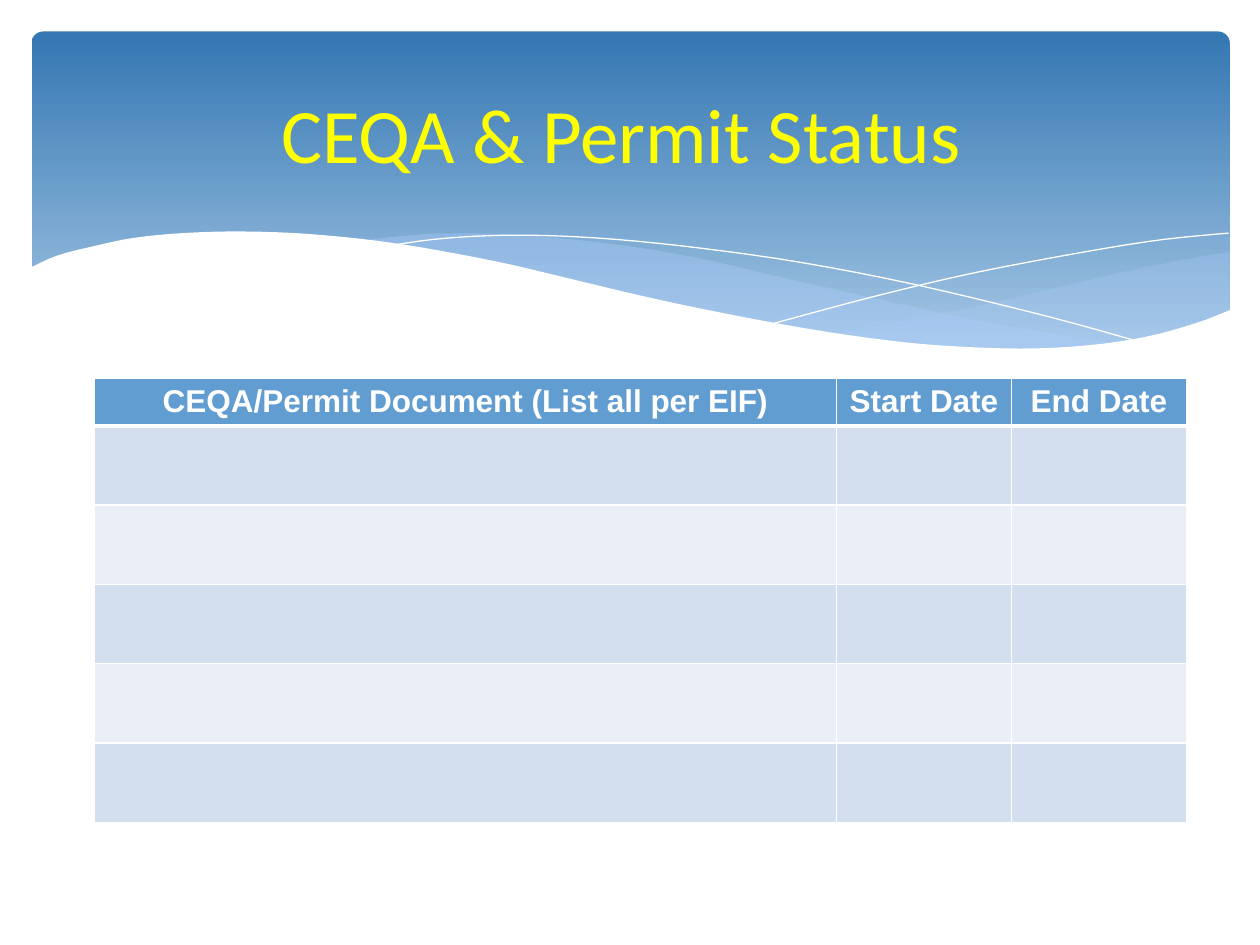
from lxml import etree
from pptx import Presentation
from pptx import util as u
from pptx.dml.color import RGBColor
from pptx.enum import shapes, text
from pptx.oxml.ns import qn

Pt = u.Pt
WHITE = RGBColor(0xFF, 0xFF, 0xFF)
YELLOW = RGBColor(0xFF, 0xFF, 0x00)
DEEP = RGBColor(0x34, 0x77, 0xB2)
PALE = RGBColor(0xA1, 0xC4, 0xE3)
VEIL = RGBColor(0xAC, 0xCB, 0xF9)
HEAD = RGBColor(0x62, 0x9D, 0xD1)
ODD = RGBColor(0xD3, 0xDF, 0xEE)
EVEN = RGBColor(0xEA, 0xEF, 0xF7)

# Curves of the banner, in points
SWELL = [(16.5, 153.4), (33, 146), (55, 140.4), (76.3, 136), (105, 133.2),
         (139, 132.3), (180, 134), (227.5, 139.3), (281.5, 149),
         (322, 158.4), (362, 168), (399.6, 176.2), (450.7, 186),
         (495.4, 193), (535.7, 197.3), (582.5, 199.2), (621.4, 197.4),
         (655.2, 192.4), (684, 184.5), (703.4, 177)]
BASE = [(703.4, 236.9), (16.5, 236.9)]
RIGHT_TOP = [(702.7, 144), (673.2, 149), (641.5, 155.5), (599, 165.6),
             (542.2, 178.3), (476, 191)]
RIGHT_LOW = [(476, 191), (507.6, 195), (545, 198.7), (586, 200),
             (615, 198.7), (645.8, 194.6), (673.2, 188.4), (702.7, 177.8)]
MID_TOP = [(643, 196.6), (581, 187.2), (533.5, 177.8), (453, 160),
           (399.6, 147.6), (352, 139.7), (302.4, 134.6), (260, 133.3),
           (236, 134.3), (206, 137.5)]
MID_LOW = [(206, 137.5), (246.2, 143.3), (291, 152), (323.3, 159.8),
           (381.6, 172.8), (432.7, 183.6), (478.8, 191.5), (519.8, 197.3),
           (565.2, 200), (603.4, 200), (643, 196.6)]
FALL = [(222.5, 140.4), (247.7, 136.8), (278.6, 134.7), (311.8, 134.6),
        (352, 136.8), (400.3, 141.8), (458, 150), (523.4, 162.7),
        (598.3, 180.7), (653, 195.8)]
RISE = [(441.4, 185), (500.4, 169.2), (558.7, 155.5), (623.5, 143.3),
        (665.3, 136.8), (702, 133.2)]


def smooth(knots, steps=4):
    """Run a Catmull-Rom curve through the knots."""
    ends = [knots[0], *knots, knots[-1]]
    dots = [knots[0]]
    for a, b, c, d in zip(ends, ends[1:], ends[2:], ends[3:]):
        for i in range(1, steps + 1):
            t = i / steps
            dots.append(tuple(
                q + t * (r - p) / 2
                + t ** 2 * (2 * p - 5 * q + 4 * r - s) / 2
                + t ** 3 * (3 * q - p - 3 * r + s) / 2
                for p, q, r, s in zip(a, b, c, d)))
    return dots


def apply(item, style):
    for name, value in style.items():
        setattr(item, name, value)


class Deck:
    title_font = {"name": "Calibri", "size": Pt(44)}
    head_font = {"name": "Arial", "size": Pt(18), "bold": True}

    def __init__(self, wide, high):
        self.prs = Presentation()
        apply(self.prs, {"slide_width": Pt(wide), "slide_height": Pt(high)})
        self.slide = self.prs.slides.add_slide(self.prs.slide_layouts[5])
        self.shapes = self.slide.shapes

    def label(self, frame, words, font, color):
        frame.text = words
        par = frame.paragraphs[0]
        par.alignment = text.PP_ALIGN.CENTER
        apply(par.runs[0].font, font)
        par.runs[0].font.color.rgb = color

    def panel(self, box, curve, stops):
        kind = shapes.MSO_SHAPE.ROUNDED_RECTANGLE
        shape = self.shapes.add_shape(kind, *map(Pt, box))
        shape.adjustments[0] = curve
        shape.shadow.inherit = False
        shape.line.fill.background()
        shape.fill.gradient()
        shape.fill.gradient_angle = 270
        for stop, (place, color) in zip(shape.fill.gradient_stops, stops):
            stop.position = place
            stop.color.rgb = color

    def outline(self, dots, close):
        dots = [(Pt(x), Pt(y)) for x, y in dots]
        pen = self.shapes.build_freeform(*dots[0])
        pen.add_line_segments(dots[1:], close=close)
        shape = pen.convert_to_shape()
        shape.shadow.inherit = False
        return shape

    def area(self, dots, color, alpha=100):
        shape = self.outline(dots, True)
        shape.line.fill.background()
        shape.fill.solid()
        shape.fill.fore_color.rgb = color
        if alpha < 100:
            tint = next(shape._element.spPr.iter(qn("a:srgbClr")))
            etree.SubElement(tint, qn("a:alpha"), val=str(alpha * 1000))

    def curve(self, dots, color):
        shape = self.outline(dots, False)
        shape.fill.background()
        shape.line.color.rgb = color
        shape.line.width = Pt(0)

    def title(self, words, box):
        shape = self.shapes.title
        names = ("left", "top", "width", "height")
        apply(shape, dict(zip(names, map(Pt, box))))
        shape.text_frame.vertical_anchor = text.MSO_ANCHOR.MIDDLE
        self.label(shape.text_frame, words, self.title_font, YELLOW)
        # Bring the title in front of the banner
        self.shapes._spTree.append(shape._element)

    def border(self, cell, widths):
        props = cell._tc.get_or_add_tcPr()
        for side, width in widths.items():
            line = etree.SubElement(props, qn("a:ln" + side), w=str(Pt(width)))
            fill = etree.SubElement(line, qn("a:solidFill"))
            etree.SubElement(fill, qn("a:srgbClr"), val=str(WHITE))

    def table(self, spot, heads, cols, rows):
        size = (sum(cols), sum(rows))
        grid = self.shapes.add_table(
            len(rows), len(cols), *map(Pt, spot + size)).table
        for col, width in zip(grid.columns, cols):
            col.width = Pt(width)
        for r, high in enumerate(rows):
            grid.rows[r].height = Pt(high)
            color = HEAD if r == 0 else ODD if r % 2 else EVEN
            for c, words in enumerate(heads):
                cell = grid.cell(r, c)
                self.border(cell, {"L": 1, "R": 1, "T": 3 if r == 1 else 1,
                                   "B": 3 if r == 0 else 1})
                cell.fill.solid()
                cell.fill.fore_color.rgb = color
                if r == 0:
                    self.label(cell.text_frame, words, self.head_font, WHITE)


def main():
    deck = Deck(720, 540)

    # Banner with its waves
    deck.panel((18, 18, 684.7, 194.4), 0.034, [(0, DEEP), (0.9, PALE)])
    deck.area(smooth(RIGHT_TOP) + smooth(RIGHT_LOW), VEIL, 29)
    deck.area(smooth(MID_TOP) + smooth(MID_LOW), VEIL, 40)
    for line in (FALL, RISE):
        deck.curve(smooth(line), WHITE)
    deck.area(smooth(SWELL) + BASE, WHITE)

    deck.title("CEQA & Permit Status ", (36, 26.6, 648, 98.6))

    # Permit table
    heads = ["CEQA/Permit Document (List all per EIF)",
             "Start Date", "End Date"]
    deck.table((54, 216), heads, [424, 100, 100], [27] + [45.3] * 5)

    deck.prs.save("out.pptx")


if __name__ == "__main__":
    main()
